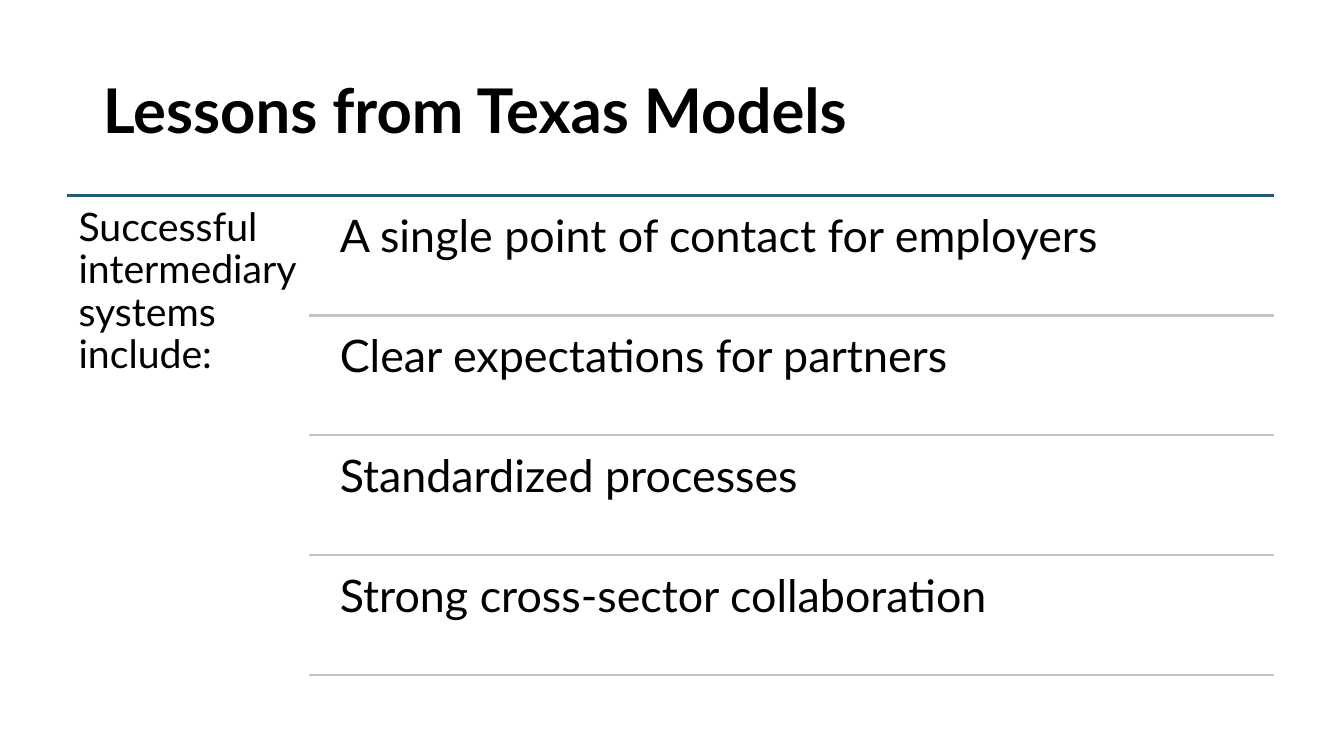
import pptx
import pptx.dml.color
import pptx.enum.shapes
import pptx.enum.text
import pptx.oxml.ns
import pptx.util
from lxml import etree

BLACK = pptx.dml.color.RGBColor(0x00, 0x00, 0x00)
TEAL = pptx.dml.color.RGBColor(0x15, 0x60, 0x82)
GREY = pptx.dml.color.RGBColor(0xBD, 0xC5, 0xCD)
FONT = "Lato"
Inches = pptx.util.Inches

LEFT, RIGHT = 0.66, 12.64
TOP, ROW_HEIGHT = 1.94, 1.19
LABEL_WIDTH = 2.4
LESSONS_LEFT = LEFT + LABEL_WIDTH
LESSON_INDENT, LESSON_DROP = 0.18, 0.05

LESSONS = [
    "A single point of contact for employers",
    "Clear expectations for partners",
    "Standardized processes",
    "Strong cross-sector collaboration",
]


def write_text(frame, text, *, size, bold=False, inset=None,
               anchor=pptx.enum.text.MSO_ANCHOR.TOP):
    frame.word_wrap = True
    frame.auto_size = pptx.enum.text.MSO_AUTO_SIZE.NONE
    frame.vertical_anchor = anchor
    if inset is not None:
        frame.margin_left = frame.margin_right = Inches(inset)
        frame.margin_top = frame.margin_bottom = Inches(inset)
    para = frame.paragraphs[0]
    para.alignment = pptx.enum.text.PP_ALIGN.LEFT
    para.line_spacing = 0.9
    span = para.add_run()
    span.text = text
    span.font.name = FONT
    span.font.size = pptx.util.Pt(size)
    span.font.bold = bold
    span.font.color.rgb = BLACK


def add_title(slide, text):
    title = slide.shapes.title
    title.left, title.top = Inches(0.92), Inches(0.4)
    title.width, title.height = Inches(11.5), Inches(1.45)
    write_text(title.text_frame, text, size=44, bold=True,
               anchor=pptx.enum.text.MSO_ANCHOR.MIDDLE)


def add_text(shapes, text, left, top, width, height, **text_format):
    box = shapes.add_textbox(Inches(left), Inches(top), Inches(width), Inches(height))
    write_text(box.text_frame, text, **text_format)


def add_rule(shapes, left, top, color):
    """Draw a horizontal line from left to the right edge of the list."""
    rule = shapes.add_connector(
        pptx.enum.shapes.MSO_CONNECTOR.STRAIGHT,
        Inches(left), Inches(top), Inches(RIGHT), Inches(top))
    rule.line.color.rgb = color
    rule.line.width = pptx.util.Pt(1.5)
    etree.SubElement(rule._element.spPr, pptx.oxml.ns.qn("a:effectLst"))


def add_lesson_list(slide, label, lessons):
    shapes = slide.shapes.add_group_shape().shapes
    add_rule(shapes, LEFT, TOP, TEAL)
    add_text(shapes, label, LEFT, TOP, LABEL_WIDTH, ROW_HEIGHT * len(lessons),
             size=28, inset=0.12)
    text_left = LESSONS_LEFT + LESSON_INDENT
    for row, lesson in enumerate(lessons):
        top = TOP + row * ROW_HEIGHT
        add_text(shapes, lesson, text_left, top + LESSON_DROP, RIGHT - text_left,
                 ROW_HEIGHT - LESSON_DROP, size=32, inset=0.13)
        add_rule(shapes, LESSONS_LEFT, top + ROW_HEIGHT, GREY)


def main():
    deck = pptx.Presentation()
    deck.slide_width, deck.slide_height = Inches(13.33), Inches(7.5)
    slide = deck.slides.add_slide(deck.slide_layouts.get_by_name("Title Only"))
    add_title(slide, "Lessons from Texas Models")
    add_lesson_list(slide, "Successful intermediary systems include:", LESSONS)
    deck.save("out.pptx")


if __name__ == "__main__":
    main()
